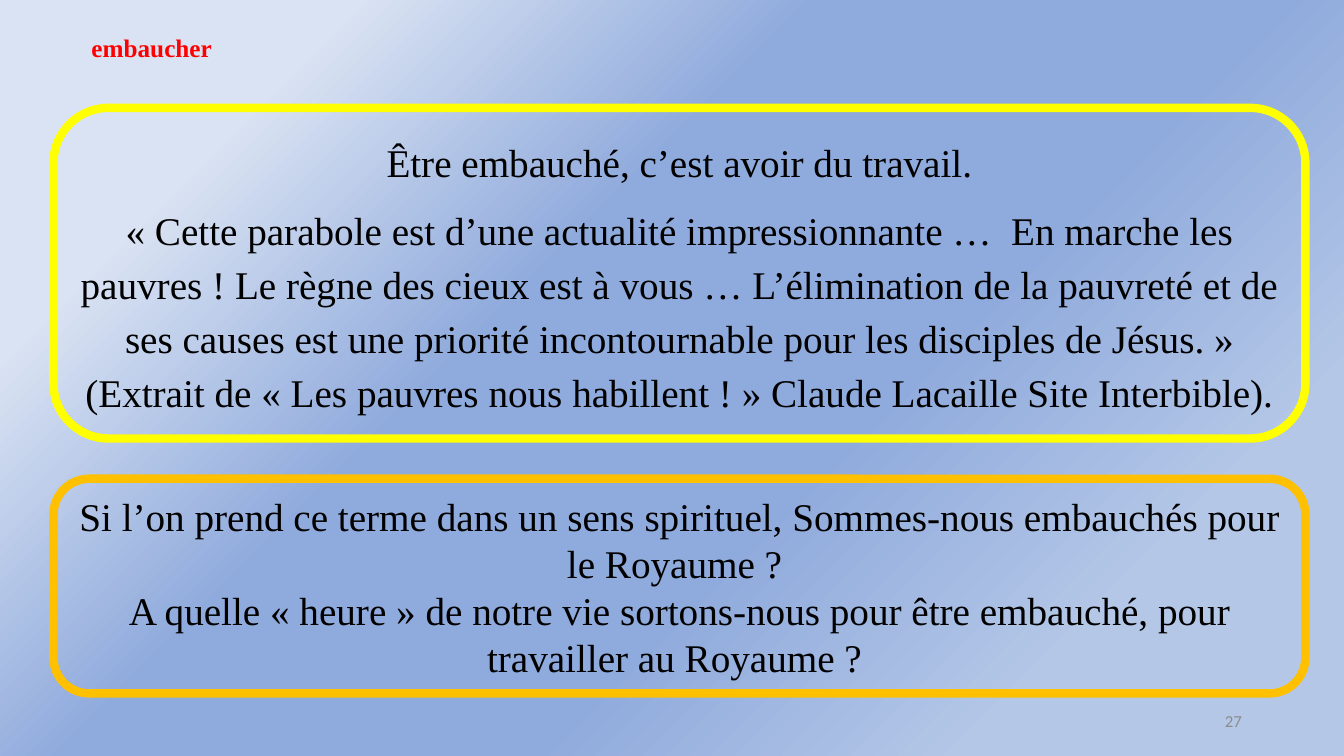
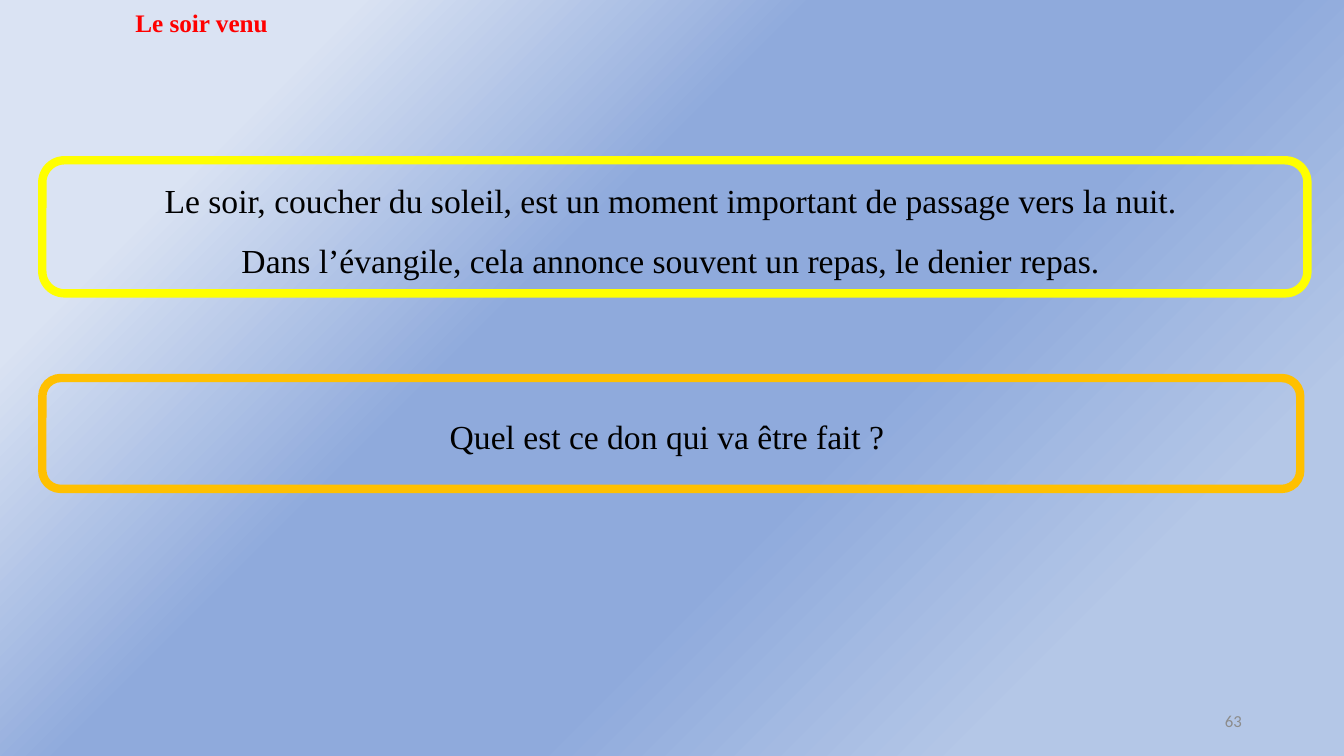
from dataclasses import dataclass

from lxml.etree import SubElement
from pptx import Presentation
from pptx.dml.color import RGBColor
from pptx.enum.shapes import MSO_SHAPE as Preset
from pptx.enum.text import MSO_ANCHOR as Anchor
from pptx.enum.text import MSO_AUTO_SIZE as AutoSize
from pptx.enum.text import PP_ALIGN as Align
from pptx.oxml.ns import qn
from pptx.util import Inches, Pt

# Shared look
WIDTH, HEIGHT = Inches(13.333), Inches(7.5)
SERIF, SANS = "Times New Roman", "Calibri"
BLACK, RED, GREY = "000000", "FF0000", "8C8C8C"
YELLOW, ORANGE = "FFFF00", "FFC000"
GRADIENT = ((18, "B4C7E7"), (39, "8FAADC"), (61, "8FAADC"), (83, "DAE3F3"))
TITLE_ONLY = 5


@dataclass(frozen=True)
class Area:
    """Place on the slide, in percent of its width and height."""
    left: float
    top: float
    width: float
    height: float

    def emu(self) -> tuple[int, int, int, int]:
        return (round(WIDTH * self.left / 100), round(HEIGHT * self.top / 100),
                round(WIDTH * self.width / 100), round(HEIGHT * self.height / 100))


@dataclass(frozen=True)
class Style:
    size: int
    color: str = BLACK
    font: str = SERIF
    bold: bool = False
    align: Align = Align.CENTER
    line_spacing: float = 1.0
    space_after: int = 0


@dataclass(frozen=True)
class Frame:
    area: Area
    border: str
    style: Style
    paragraphs: tuple[str, ...]


@dataclass(frozen=True)
class Page:
    title: str
    title_area: Area
    number: str
    frames: tuple[Frame, ...]


TITLE = Style(18, RED, bold=True)
NUMBER = Style(12, GREY, SANS, align=Align.RIGHT)
NUMBER_AREA = Area(70.65, 92.67, 22.5, 5.33)
QUESTION = Style(28)
COMMENT = Style(28, line_spacing=1.15, space_after=10)
SHORT_COMMENT = Style(24, line_spacing=1.15, space_after=10)

# Content
PAGES = (
    Page("embaucher", Area(-5.78, 3.6, 34.13, 5.33), "27", (
        Frame(Area(3.98, 14.27, 93.15, 43.73), YELLOW, COMMENT, (
            "Être embauché, c’est avoir du travail.",
            "« Cette parabole est d’une actualité impressionnante …  En marche les "
            "pauvres ! Le règne des cieux est à vous … L’élimination de la pauvreté "
            "et de ses causes est une priorité incontournable pour les disciples de "
            "Jésus. » (Extrait de « Les pauvres nous habillent ! » Claude Lacaille "
            "Site Interbible).")),
        Frame(Area(3.98, 63.33, 93.15, 28.4), ORANGE, QUESTION, (
            "Si l’on prend ce terme dans un sens spirituel, Sommes-nous embauchés "
            "pour le Royaume ? ",
            "A quelle « heure » de notre vie sortons-nous pour être embauché, pour "
            "travailler au Royaume ? ")))),
    Page("Le soir venu", Area(-4.2, 0.27, 38.4, 5.33), "63", (
        Frame(Area(3.15, 21.2, 94.13, 17.6), YELLOW, SHORT_COMMENT, (
            "Le soir, coucher du soleil, est un moment important de passage vers "
            "la nuit. ",
            "Dans l’évangile, cela annonce souvent un repas, le denier repas. ")),
        Frame(Area(3.15, 50, 93.6, 14.67), ORANGE, SHORT_COMMENT, (
            "Quel est ce don qui va être fait ? ",)))),
)


def rgb(color: str) -> RGBColor:
    return RGBColor.from_string(color)


def write(shape, paragraphs: tuple[str, ...], style: Style, anchor: Anchor) -> None:
    text = shape.text_frame
    text.word_wrap = True
    text.auto_size = AutoSize.NONE
    text.vertical_anchor = anchor
    for index, words in enumerate(paragraphs):
        paragraph = text.add_paragraph() if index else text.paragraphs[0]
        paragraph.alignment = style.align
        paragraph.line_spacing = style.line_spacing
        paragraph.space_after = Pt(style.space_after)
        run = paragraph.add_run()
        run.text = words
        run.font.name = style.font
        run.font.size = Pt(style.size)
        run.font.bold = style.bold
        run.font.color.rgb = rgb(style.color)


def paint_background(master) -> None:
    fill = master.background.fill
    fill.gradient()
    fill.gradient_angle = 135  # counter-clockwise: from bottom right to top left
    stops = master.element.find(f".//{qn('p:bg')}//{qn('a:gsLst')}")
    for stop in list(stops):
        stops.remove(stop)
    for percent, color in GRADIENT:
        stop = SubElement(stops, qn("a:gs"), pos=str(percent * 1000))
        SubElement(stop, qn("a:srgbClr"), val=color)


def draw_frame(slide, frame: Frame) -> None:
    box = slide.shapes.add_shape(Preset.ROUNDED_RECTANGLE, *frame.area.emu())
    box.shadow.inherit = False
    box.fill.background()
    box.line.color.rgb = rgb(frame.border)
    box.line.width = Pt(6)
    write(box, frame.paragraphs, frame.style, Anchor.MIDDLE)


def draw_page(deck, page: Page) -> None:
    slide = deck.slides.add_slide(deck.slide_layouts[TITLE_ONLY])
    title = slide.shapes.title
    title.left, title.top, title.width, title.height = page.title_area.emu()
    write(title, (page.title,), TITLE, Anchor.TOP)
    for frame in page.frames:
        draw_frame(slide, frame)
    number = slide.shapes.add_textbox(*NUMBER_AREA.emu())
    write(number, (page.number,), NUMBER, Anchor.MIDDLE)


def main() -> None:
    deck = Presentation()
    deck.slide_width, deck.slide_height = WIDTH, HEIGHT
    paint_background(deck.slide_master)
    for page in PAGES:
        draw_page(deck, page)
    deck.save("out.pptx")


if __name__ == "__main__":
    main()
